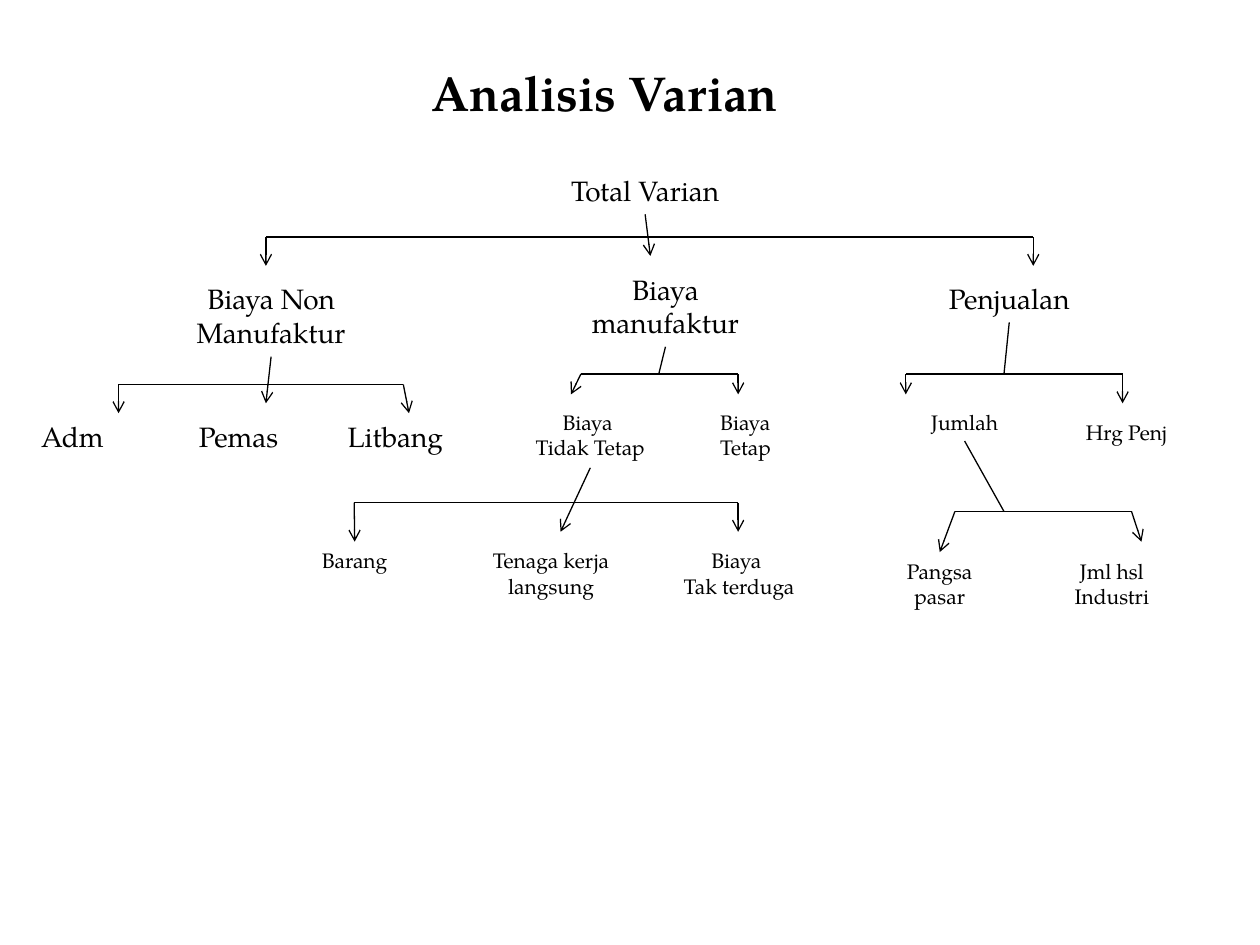
from lxml.etree import SubElement
from pptx import Presentation
from pptx.dml.color import RGBColor
from pptx.enum.shapes import MSO_CONNECTOR, MSO_SHAPE
from pptx.enum.text import MSO_ANCHOR, MSO_AUTO_SIZE, PP_ALIGN
from pptx.oxml.ns import qn
from pptx.util import Cm, Pt

COLORS = {"ink": "000000", "paper": "FFFFFF"}
FONT = "TeX Gyre Pagella"
INK = RGBColor.from_string(COLORS["ink"])

deck = Presentation()
deck.slide_width, deck.slide_height = Cm(25.4), Cm(19.05)
slide = deck.slides.add_slide(deck.slide_layouts[6])


def write(shape, text, size=16, bold=False, align=PP_ALIGN.CENTER,
          anchor=MSO_ANCHOR.TOP, fit=MSO_AUTO_SIZE.SHAPE_TO_FIT_TEXT):
    frame = shape.text_frame
    frame.word_wrap = True
    frame.auto_size = fit
    frame.vertical_anchor = anchor
    frame.text = text
    for para in frame.paragraphs:
        para.alignment = align
        para.font.name = FONT
        para.font.size = Pt(size)
        para.font.bold = bold
        para.font.color.rgb = INK


def draw(start, end, arrow=False, source=None, target=None):
    line = slide.shapes.add_connector(
        MSO_CONNECTOR.STRAIGHT, *[Cm(v) for v in (*start, *end)])
    if source is not None:
        line.begin_connect(source, 2)
    if target is not None:
        line.end_connect(target, 0)
    line.line.color.rgb = INK
    line.line.width = Pt(0.75)
    if arrow:
        SubElement(line.line._get_or_add_ln(), qn("a:tailEnd"), type="arrow")
    SubElement(line._element.spPr, qn("a:effectLst"))


# Title
title = slide.shapes.add_textbox(Cm(1.4), Cm(0.79), Cm(21.59), Cm(2.13))
write(title, "Analisis Varian", size=28, bold=True,
      anchor=MSO_ANCHOR.MIDDLE, fit=MSO_AUTO_SIZE.NONE)

# Tree nodes: key, text, left, top, width, size, lines, alignment
MID, LEFT = PP_ALIGN.CENTER, PP_ALIGN.LEFT
HEIGHTS = {(16, 1): 0.94, (16, 2): 1.63, (12, 1): 0.76, (12, 2): 1.3}
NODES = [
    ("total", "Total Varian", 10.72, 3.38, 4.57, 16, 1, MID),
    ("price", "Hrg Penj", 21.64, 8.33, 2.77, 12, 1, LEFT),
    ("sales", "Penjualan", 18.06, 5.56, 4.57, 16, 1, MID),
    ("plant", "Biaya manufaktur", 11.13, 5.36, 4.57, 16, 2, MID),
    ("other", "Biaya Non Manufaktur", 3.18, 5.56, 4.57, 16, 2, MID),
    ("fixed", "Biaya\nTetap", 14.27, 8.13, 1.98, 12, 2, LEFT),
    ("loose", "Biaya \nTidak Tetap", 10.11, 8.13, 3.58, 12, 2, MID),
    ("lab", "Litbang", 6.76, 8.33, 2.97, 16, 1, LEFT),
    ("market", "Pemas", 3.76, 8.33, 2.59, 16, 1, LEFT),
    ("admin", "Adm", 0.58, 8.33, 2.59, 16, 1, LEFT),
    ("count", "Jumlah", 18.06, 8.13, 2.77, 12, 1, MID),
    ("goods", "Barang", 5.36, 10.92, 3.58, 12, 1, MID),
    ("labor", "Tenaga kerja langsung", 9.32, 10.92, 3.58, 12, 2, MID),
    ("extra", "Biaya \nTak terduga", 13.11, 10.92, 3.58, 12, 2, MID),
    ("share", "Pangsa pasar", 17.65, 11.13, 2.59, 12, 2, MID),
    ("trade", "Jml hsl Industri", 21.03, 11.13, 2.77, 12, 2, MID),
]
boxes = {}
for key, text, left, top, width, size, rows, align in NODES:
    box = slide.shapes.add_shape(
        MSO_SHAPE.RECTANGLE, Cm(left), Cm(top), Cm(width),
        Cm(HEIGHTS[size, rows]))
    box.shadow.inherit = False
    box.fill.solid()
    box.fill.fore_color.rgb = RGBColor.from_string(COLORS["paper"])
    box.line.fill.background()
    write(box, text, size=size, align=align)
    boxes[key] = box

# Branches: parent, bar height, stem end, then two legs (bar x, tip, child)
BRANCHES = [
    ("total", 4.78, (13.11, 5.16),
     (5.36, (5.36, 5.36), None), (20.83, (20.83, 5.36), None)),
    ("other", 7.75, (5.36, 8.13),
     (2.39, (2.39, 8.33), None), (8.13, (8.24, 8.33), "lab")),
    ("plant", 7.54, (13.28, 7.54),
     (11.71, (11.51, 7.95), None), (14.88, (14.88, 7.95), None)),
    ("sales", 7.54, (20.24, 7.54),
     (18.26, (18.26, 7.95), None), (22.63, (22.63, 8.13), None)),
    ("loose", 10.13, (11.3, 10.72),
     (7.14, (7.15, 10.92), "goods"), (14.88, (14.88, 10.72), None)),
    ("count", 10.31, (20.24, 10.31),
     (19.25, (18.95, 11.13), "share"), (22.81, (23.01, 10.92), None)),
]
for key, bar, stem, *legs in BRANCHES:
    # A stem that passes the bar carries its own arrowhead
    draw(stem, stem, arrow=stem[1] > bar, source=boxes[key])
    draw((legs[0][0], bar), (legs[1][0], bar))
    for x, tip, child in legs:
        draw((x, bar), tip, arrow=True, target=boxes.get(child))

deck.save("out.pptx")
